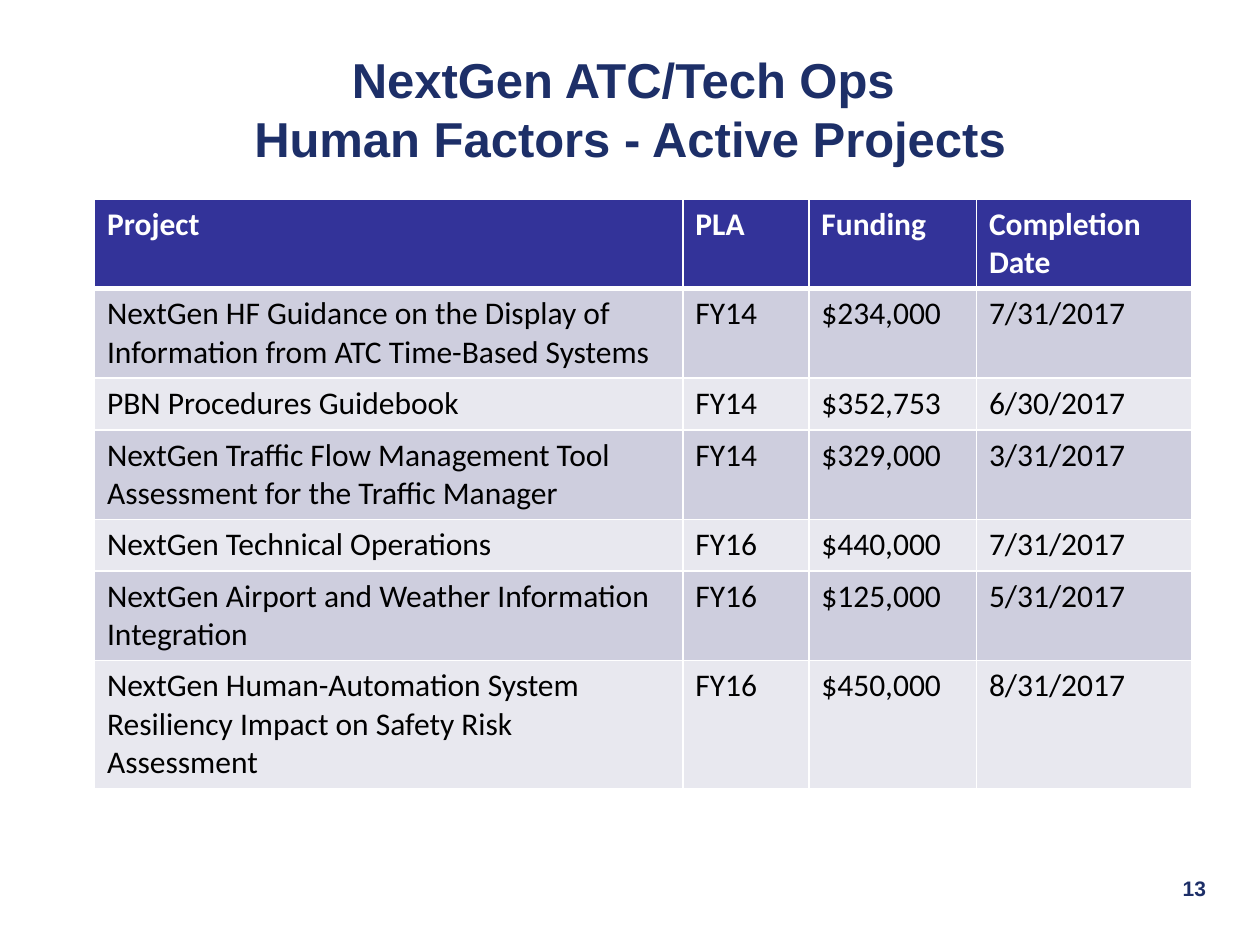
from lxml.etree import SubElement
from pptx import Presentation
from pptx.dml.color import RGBColor
from pptx.enum.text import MSO_ANCHOR as Anchor, PP_ALIGN as Align
from pptx.oxml.ns import qn
from pptx.util import Inches, Pt

COLORS = {
    "navy": "1D2F68",
    "header": "333399",
    "odd_row": "CECEDE",
    "even_row": "E8E8EF",
    "white": "FFFFFF",
    "black": "000000",
}
HEADING = {"name": "Arial", "size": Pt(28), "bold": True}
PAGE = {"name": "Arial", "size": Pt(12), "bold": True}
HEADER = {"name": "Calibri", "size": Pt(18), "bold": True}
BODY = {"name": "Calibri", "size": Pt(18), "bold": False}


def format_text(paragraph, style, color):
    for name, value in style.items():
        setattr(paragraph.font, name, value)
    paragraph.font.color.rgb = RGBColor.from_string(COLORS[color])


def add_border(cell, side, width):
    properties = cell._tc.get_or_add_tcPr()
    line = SubElement(properties, qn(f"a:ln{side}"), w=str(Pt(width)))
    fill = SubElement(line, qn("a:solidFill"))
    SubElement(fill, qn("a:srgbClr"), val=COLORS["white"])


prs = Presentation()
prs.slide_width = Inches(10)
prs.slide_height = Inches(7.5)
slide = prs.slides.add_slide(prs.slide_layouts[5])

heading = slide.shapes.title
heading.left, heading.top = Inches(0), Inches(0.38)
heading.width, heading.height = Inches(10), Inches(0.96)
heading.text_frame.text = "NextGen ATC/Tech Ops \vHuman Factors - Active Projects"
heading.text_frame.vertical_anchor = Anchor.MIDDLE
heading.text_frame.paragraphs[0].alignment = Align.CENTER
format_text(heading.text_frame.paragraphs[0], HEADING, "navy")

rows = [
    ("Project", "PLA", "Funding", "Completion Date"),
    ("NextGen HF Guidance on the Display of Information from ATC Time-Based Systems",
     "FY14", "$234,000", "7/31/2017"),
    ("PBN Procedures Guidebook", "FY14", "$352,753", "6/30/2017"),
    ("NextGen Traffic Flow Management Tool Assessment for the Traffic Manager",
     "FY14", "$329,000", "3/31/2017"),
    ("NextGen Technical Operations", "FY16", "$440,000", "7/31/2017"),
    ("NextGen Airport and Weather Information Integration",
     "FY16", "$125,000", "5/31/2017"),
    ("NextGen Human-Automation System Resiliency Impact on Safety Risk Assessment",
     "FY16", "$450,000", "8/31/2017"),
]
column_widths = [4.67, 1, 1.33, 1.71]

projects_frame = slide.shapes.add_table(
    len(rows), len(column_widths),
    Inches(0.75), Inches(1.58), Inches(8.71), Inches(4.61))
projects = projects_frame.table
for column, width in zip(projects.columns, column_widths):
    column.width = Inches(width)

for r, values in enumerate(rows):
    projects.rows[r].height = Inches(0.41)
    if r == 0:
        style, text_color, fill_color = HEADER, "white", "header"
    else:
        style, text_color = BODY, "black"
        fill_color = "odd_row" if r % 2 else "even_row"
    for c, value in enumerate(values):
        cell = projects.cell(r, c)
        cell.text = value
        format_text(cell.text_frame.paragraphs[0], style, text_color)
        for side in "LRTB":
            below_header = (r, side) in [(0, "B"), (1, "T")]
            add_border(cell, side, 3 if below_header else 1)
        cell.fill.solid()
        cell.fill.fore_color.rgb = RGBColor.from_string(COLORS[fill_color])
projects_frame.height = Inches(4.61)

page_number = slide.shapes.add_textbox(
    Inches(7.59), Inches(6.9), Inches(2.08), Inches(0.5)).text_frame
page_number.word_wrap = True
page_number.text = "13"
page_number.paragraphs[0].alignment = Align.RIGHT
format_text(page_number.paragraphs[0], PAGE, "navy")

prs.save("out.pptx")
